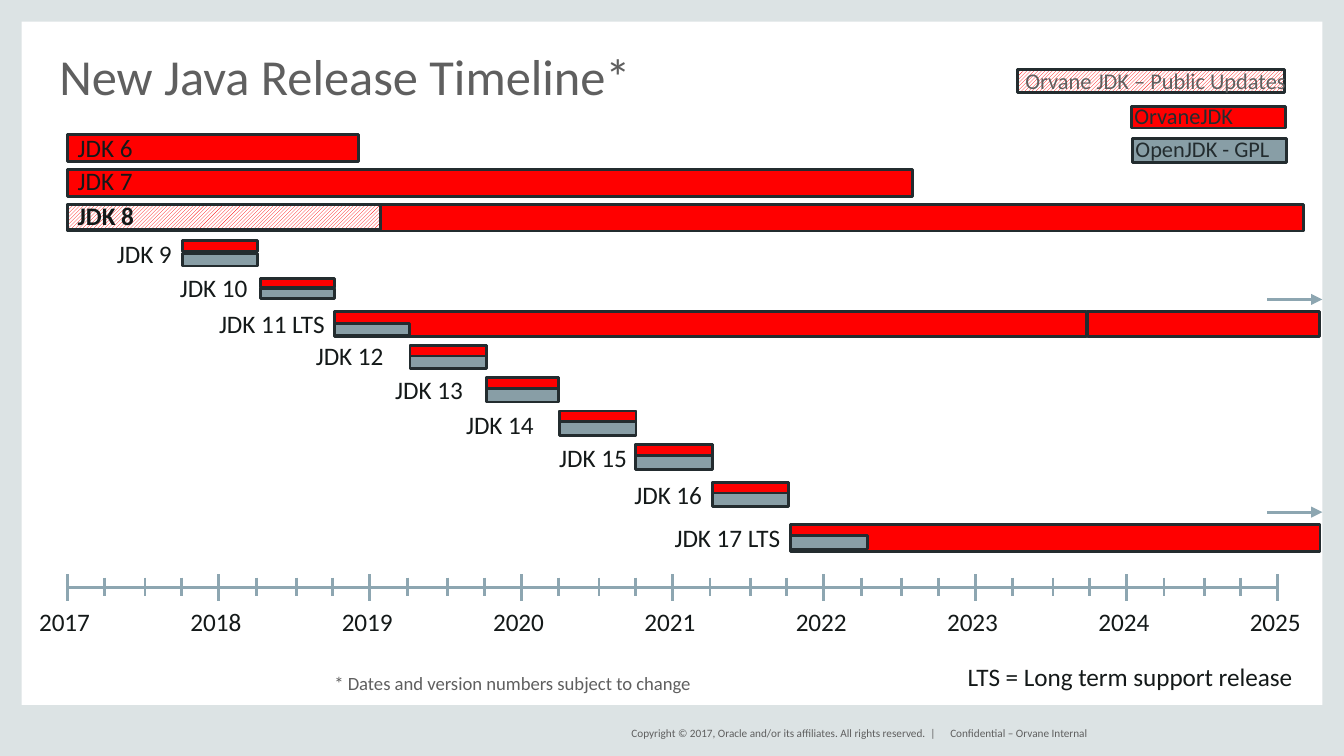
from pptx import Presentation
from pptx.dml.color import RGBColor
from pptx.enum.dml import MSO_PATTERN
from pptx.enum.shapes import MSO_CONNECTOR, MSO_SHAPE
from pptx.enum.text import MSO_ANCHOR, MSO_AUTO_SIZE, PP_ALIGN
from pptx.oxml.ns import qn
from pptx.util import Cm, Pt
from lxml import etree

RECT = MSO_SHAPE.RECTANGLE
STRAIGHT = MSO_CONNECTOR.STRAIGHT
HATCH = MSO_PATTERN.LIGHT_UPWARD_DIAGONAL
TOP, MIDDLE, BOTTOM = MSO_ANCHOR.TOP, MSO_ANCHOR.MIDDLE, MSO_ANCHOR.BOTTOM
LEFT, RIGHT = PP_ALIGN.LEFT, PP_ALIGN.RIGHT

WHITE = RGBColor(0xFF, 0xFF, 0xFF)
FRAME = RGBColor(0xDC, 0xE3, 0xE4)
RED = RGBColor(0xFF, 0x00, 0x00)
SLATE = RGBColor(0x88, 0x9E, 0xA6)
EDGE = RGBColor(0x23, 0x2C, 0x2F)
AXIS = RGBColor(0x8D, 0xA6, 0xB1)
INK = RGBColor(0x14, 0x19, 0x19)
GREY = RGBColor(0x5F, 0x5F, 0x5F)

FONT = "Calibri"
WIDE, HIGH = 25.4, 14.29
START, YEAR = 1.27, 2.86
QUARTERS = (0.71, 1.47, 2.16)

# label, label left, label top, bar left, bar width, bar top,
# red height, slate offset, slate height
SHORT = [
    ("JDK 9", 2.21, 4.57, 3.45, 1.42, 4.55, 0.2, 0.25, 0.23),
    ("JDK 10", 3.4, 5.21, 4.93, 1.4, 5.26, 0.18, 0.2, 0.18),
    ("JDK 12", 5.97, 6.5, 7.75, 1.45, 6.53, 0.2, 0, 0.43),
    ("JDK 13", 7.47, 7.14, 9.2, 1.35, 7.14, 0.2, 0, 0.46),
    ("JDK 14", 8.81, 7.8, 10.57, 1.45, 7.77, 0.2, 0, 0.46),
    ("JDK 15", 10.57, 8.43, 12.01, 1.45, 8.41, 0.2, 0, 0.46),
    ("JDK 16", 11.99, 9.12, 13.46, 1.45, 9.12, 0.2, 0, 0.46),
]


def add_bar(slide, left, top, width, height, color, edge=EDGE, hatch=False):
    bar = slide.shapes.add_shape(RECT, Cm(left), Cm(top), Cm(width), Cm(height))
    bar.shadow.inherit = False
    if hatch:
        bar.fill.patterned()
        bar.fill.pattern = HATCH
        bar.fill.fore_color.rgb = color
        bar.fill.back_color.rgb = WHITE
    else:
        bar.fill.solid()
        bar.fill.fore_color.rgb = color
    if edge is None:
        bar.line.fill.background()
    else:
        bar.line.color.rgb = edge
        bar.line.width = Pt(1.5)


def set_text(shape, text, size, color, bold=False, align=LEFT,
             anchor=TOP, spacing=0.9, wrap=False):
    frame = shape.text_frame
    frame.text = text
    frame.word_wrap = wrap
    frame.auto_size = MSO_AUTO_SIZE.NONE
    frame.vertical_anchor = anchor
    frame.margin_left = frame.margin_right = 0
    frame.margin_top = frame.margin_bottom = 0
    para = frame.paragraphs[0]
    para.alignment = align
    para.line_spacing = spacing
    font = para.runs[0].font
    font.name, font.size, font.bold = FONT, Pt(size), bold
    font.color.rgb = color


def add_label(slide, text, left, top, width=1.45, height=0.51,
              size=13.5, color=INK, **style):
    box = slide.shapes.add_textbox(Cm(left), Cm(top), Cm(width), Cm(height))
    set_text(box, text, size, color, **style)


def add_line(slide, left, top, right, bottom, arrow=False):
    line = slide.shapes.add_connector(
        STRAIGHT, Cm(left), Cm(top), Cm(right), Cm(bottom))
    line.line.color.rgb = AXIS
    line.line.width = Pt(1.5)
    if arrow:
        tail = etree.SubElement(line.line._get_or_add_ln(), qn("a:tailEnd"))
        tail.set("type", "triangle")
    etree.SubElement(line._element.spPr, qn("a:effectLst"))


def add_frame(slide):
    side = 0.41
    for box in ((0, 0, side, HIGH), (WIDE - side, 0, side, HIGH),
                (0, 13.33, WIDE, HIGH - 13.33), (0, 0, WIDE, side)):
        add_bar(slide, *box, FRAME, edge=None)


def add_title(slide):
    title = slide.shapes.title
    title.left, title.top = Cm(1.12), Cm(0.84)
    title.width, title.height = Cm(23.19), Cm(1.14)
    set_text(title, "New Java Release Timeline*", 27, GREY,
             anchor=BOTTOM, spacing=0.8, wrap=True)


def add_axis(slide):
    add_line(slide, START, 11.1, START + 8 * YEAR, 11.1)
    for step in range(9):
        left = START + step * YEAR
        add_line(slide, left, 10.85, left, 11.36)
        add_label(slide, str(2017 + step), left - 0.53, 11.52, 1.07, 0.43)
        if step < 8:
            for part in QUARTERS:
                add_line(slide, left + part, 10.92, left + part, 11.26)


def add_long(slide):
    """Draw the releases that run for years, with their labels."""
    for top, width in ((2.54, 5.51), (3.2, 15.98), (3.86, 23.37)):
        add_bar(slide, START, top, width, 0.51, RED)
    add_bar(slide, START, 3.86, 5.92, 0.48, RED, hatch=True)
    add_label(slide, "JDK 6", 1.47, 2.57)
    add_label(slide, "JDK 7", 1.47, 3.2)
    add_label(slide, "JDK 8", 1.47, 3.86, bold=True)

    add_bar(slide, 6.32, 5.89, 14.22, 0.48, RED)
    add_bar(slide, 20.55, 5.89, 4.39, 0.48, RED)
    add_bar(slide, 6.32, 6.12, 1.42, 0.23, SLATE)
    add_label(slide, "JDK 11 LTS", 4.14, 5.89, 2.03)

    add_bar(slide, 14.94, 9.91, 10.01, 0.51, RED)
    add_bar(slide, 14.94, 10.13, 1.45, 0.25, SLATE)
    add_label(slide, "JDK 17 LTS", 12.75, 9.93, 2.03)
    for top in (5.66, 9.68):
        add_line(slide, 23.95, top, 24.99, top, arrow=True)


def add_short(slide):
    """Draw the half-year releases: red above slate."""
    for name, x, y, left, width, top, red, drop, slate in SHORT:
        add_bar(slide, left, top + drop, width, slate, SLATE)
        add_bar(slide, left, top, width, red, RED)
        add_label(slide, name, x, y)


def add_legend(slide):
    add_bar(slide, 19.23, 1.32, 5.05, 0.43, RED, hatch=True)
    add_bar(slide, 21.39, 2.01, 2.9, 0.41, RED)
    add_bar(slide, 21.41, 2.62, 2.9, 0.46, SLATE)
    for text, left, top, width, color in (
            ("Orvane JDK – Public Updates", 19.38, 1.32, 4.93, GREY),
            ("OrvaneJDK", 21.44, 1.98, 2.8, EDGE),
            ("OpenJDK - GPL", 21.46, 2.62, 2.8, EDGE)):
        add_label(slide, text, left, top, width, 0.46, 12, color)


def add_notes(slide):
    add_label(slide, "LTS = Long term support release", 18.29, 12.57, 6.48)
    add_label(slide, "* Dates and version numbers subject to change",
              6.32, 12.75, 6.7, 0.36, 10, GREY)
    foot = {"size": 6, "color": GREY, "anchor": MIDDLE, "spacing": 1.0}
    add_label(slide, "Copyright © 2017, Oracle and/or its affiliates. "
              "All rights reserved.  |", 11.2, 13.67, 6.48, 0.38,
              align=RIGHT, **foot)
    add_label(slide, "Confidential – Orvane Internal",
              17.96, 13.67, 5.72, 0.38, **foot)


def main():
    deck = Presentation()
    deck.slide_width, deck.slide_height = Cm(WIDE), Cm(HIGH)
    slide = deck.slides.add_slide(deck.slide_layouts[5])
    add_frame(slide)
    add_title(slide)
    add_axis(slide)
    add_long(slide)
    add_short(slide)
    add_legend(slide)
    add_notes(slide)
    deck.save("out.pptx")


if __name__ == "__main__":
    main()
